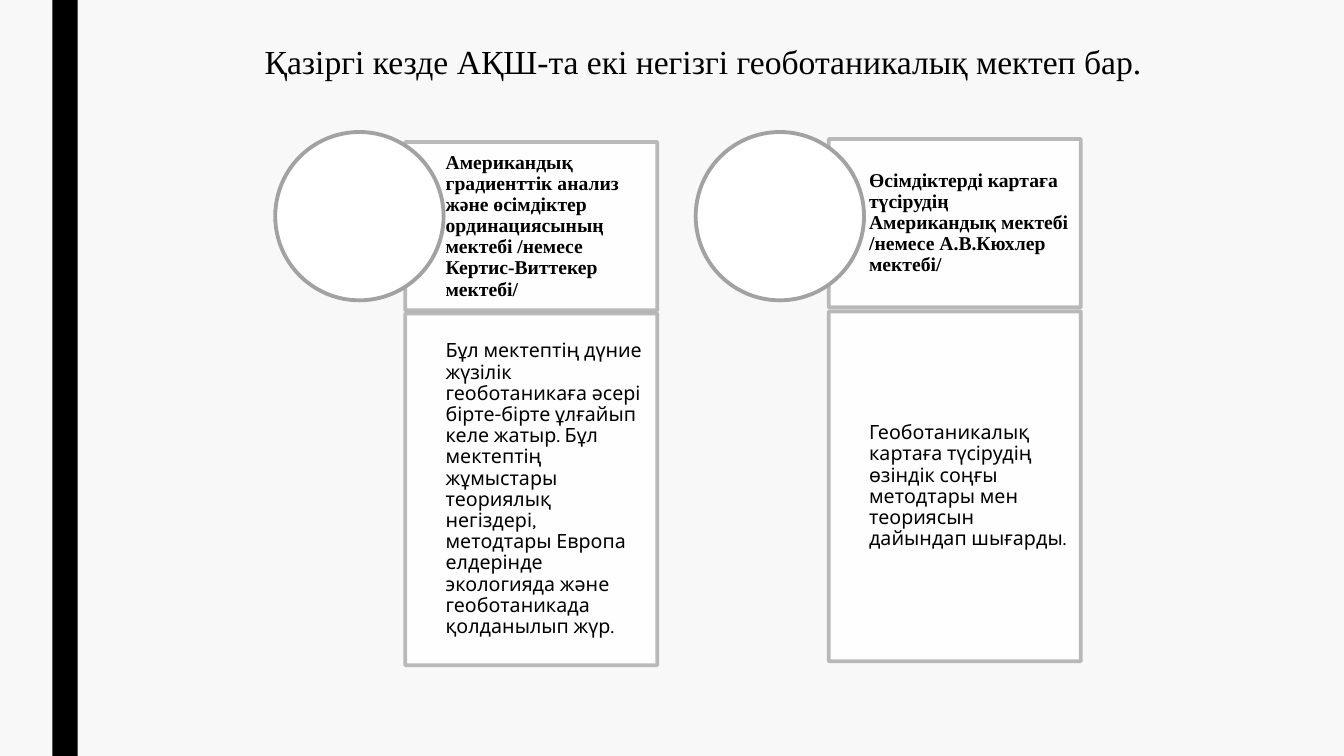
import lxml.etree
import pptx
import pptx.dml.color
import pptx.enum.shapes
import pptx.enum.text
import pptx.oxml.ns
import pptx.util

SHAPES = pptx.enum.shapes.MSO_SHAPE
ALIGN = pptx.enum.text.PP_ALIGN
ANCHOR = pptx.enum.text.MSO_ANCHOR
SERIF = "Times New Roman"
SANS = "Karla"
SCHOOLS = [
    dict(box=(273, 131, 379, 529), drop=10, head=167, body=349,
         title="Американдық градиенттік анализ және өсімдіктер ординациясының "
               "мектебі /немесе Кертис-Виттекер мектебі/",
         text="Бұл мектептің дүние жүзілік геоботаникаға әсері бірте-бірте "
              "ұлғайып келе жатыр. Бұл мектептің жұмыстары теориялық негіздері, "
              "методтары Европа елдерінде экологияда және геоботаникада "
              "қолданылып жүр."),
    dict(box=(690, 131, 382, 525), drop=7, head=167, body=347,
         title="Өсімдіктерді картаға түсірудің Американдық мектебі "
               "/немесе А.В.Кюхлер мектебі/",
         text="Геоботаникалық картаға түсірудің өзіндік соңғы методтары мен "
              "теориясын дайындап шығарды."),
]


def px(n):
    """Turn px, a hundred to the inch, into EMU."""
    return pptx.util.Emu(n * 9144)


def color(value):
    """Return the RGB colour of a hex string."""
    return pptx.dml.color.RGBColor.from_string(value)


def set_alpha(sp, percent):
    """Give the fill and the line of a shape the same opacity."""
    for clr in sp._element.spPr.iter(pptx.oxml.ns.qn("a:srgbClr")):
        alpha = lxml.etree.SubElement(clr, pptx.oxml.ns.qn("a:alpha"))
        alpha.set("val", str(percent * 1000))


def add_shape(slide, kind, box, fill, line=None):
    """Draw a flat preset shape in a box."""
    sp = slide.shapes.add_shape(kind, *map(px, box))
    sp.shadow.inherit = False
    sp.fill.solid()
    sp.fill.fore_color.rgb = color(fill)
    if line:
        sp.line.color.rgb = color(line)
        sp.line.width = pptx.util.Pt(2.75)
    else:
        sp.line.fill.background()
    return sp


def write(sp, text, size, font=SERIF, bold=False, align=ALIGN.LEFT,
          anchor=ANCHOR.MIDDLE, margins=(10, 5, 10, 5), spacing=1, wrap=True):
    """Write one formatted paragraph into a shape."""
    tf = sp.text_frame
    tf.word_wrap = wrap
    tf.vertical_anchor = anchor
    tf.margin_left, tf.margin_top, tf.margin_right, tf.margin_bottom = map(px, margins)
    p = tf.paragraphs[0]
    p.alignment = align
    p.line_spacing = spacing
    p.space_before = pptx.util.Pt(0)
    r = p.add_run()
    r.text = text
    r.font.size = pptx.util.Pt(size)
    r.font.name = font
    r.font.bold = bold
    r.font.color.rgb = color("000000")


def add_title(slide, box, text):
    """Move the title placeholder to a box and fill it."""
    sp = slide.shapes.title
    sp.left, sp.top, sp.width, sp.height = map(px, box)
    write(sp, text, 24, align=ALIGN.CENTER, anchor=ANCHOR.TOP, wrap=False)
    sp.text_frame.auto_size = pptx.enum.text.MSO_AUTO_SIZE.SHAPE_TO_FIT_TEXT


def add_card(slide, box, text, **style):
    """Draw a translucent card with text right of the circle's edge."""
    sp = add_shape(slide, SHAPES.RECTANGLE, box, "FFFFFF", "B2B2B2")
    set_alpha(sp, 90)
    write(sp, text, 14, margins=(40, 11, 11, 11), spacing=0.9, **style)


def add_school(slide, box, drop, head, body, title, text):
    """Draw a school: heading card, description card and circle."""
    left, top, width, height = box
    card_width, diameter = 250, 167
    card_left = left + width - card_width
    add_card(slide, (card_left, top + drop, card_width, head), title, bold=True)
    add_card(slide, (card_left, top + height - body, card_width, body), text, font=SANS)
    add_shape(slide, SHAPES.OVAL, (left, top, diameter, diameter), "FFFFFF", "A2A2A2")


def main():
    """Build and save the slide."""
    prs = pptx.Presentation()
    prs.slide_width, prs.slide_height = px(1333), px(750)
    slide = prs.slides.add_slide(prs.slide_layouts[5])
    slide.background.fill.solid()
    slide.background.fill.fore_color.rgb = color("F8F8F8")
    add_shape(slide, SHAPES.RECTANGLE, (52, 0, 25, 750), "000000")
    add_title(slide, (245, 36, 905, 50),
              "Қазіргі кезде АҚШ-та екі негізгі геоботаникалық мектеп бар.")
    for school in SCHOOLS:
        add_school(slide, **school)
    prs.save("out.pptx")


if __name__ == "__main__":
    main()
